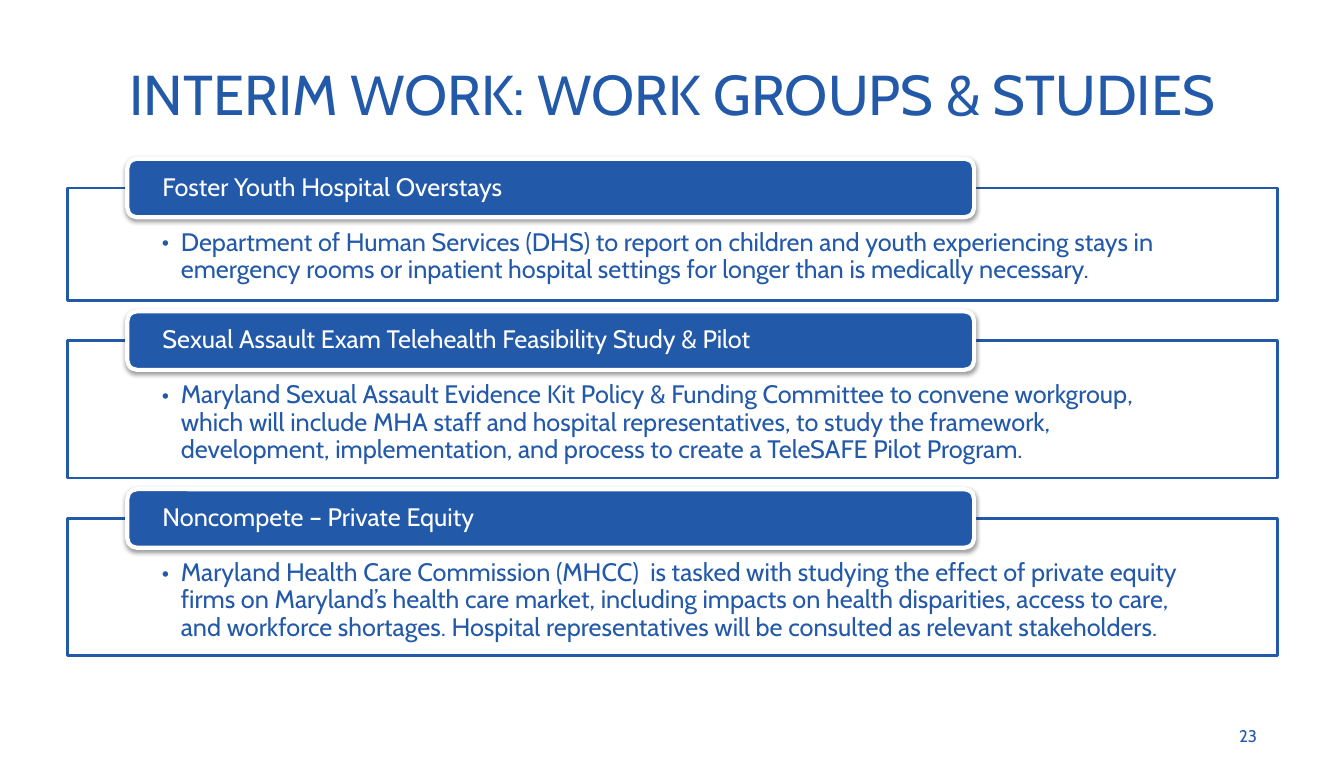
from dataclasses import dataclass

from lxml import etree
from pptx import Presentation
from pptx.dml.color import RGBColor
from pptx.enum.shapes import MSO_SHAPE as SHAPE
from pptx.enum.text import MSO_ANCHOR as ANCHOR, PP_ALIGN as ALIGN
from pptx.oxml import parse_xml
from pptx.oxml.ns import nsdecls, qn
from pptx.util import Inches, Pt


@dataclass(frozen=True)
class Theme:
    font: str = "Cabin"
    blue: RGBColor = RGBColor(0x23, 0x59, 0xA9)
    white: RGBColor = RGBColor(0xFF, 0xFF, 0xFF)
    title: Pt = Pt(40)
    body: Pt = Pt(18)
    number: Pt = Pt(12)


theme = Theme()


def write(sp, text, size, color, align, anchor, insets):
    """Fill a shape with one styled paragraph and return the paragraph."""
    tf = sp.text_frame
    tf.word_wrap = True
    tf.vertical_anchor = anchor
    tf.margin_left = tf.margin_right = Inches(insets[0])
    tf.margin_top, tf.margin_bottom = Inches(insets[1]), Inches(insets[2])
    p = tf.paragraphs[0]
    p.text = text
    p.alignment = align
    font = p.runs[0].font
    font.name, font.size, font.color.rgb = theme.font, size, color
    return p


def add_box(kind, left, top, width, height, fill, line, line_width):
    """Add a filled, outlined shape without a shadow."""
    sp = s.shapes.add_shape(kind, Inches(left), Inches(top), Inches(width), Inches(height))
    sp.shadow.inherit = False
    sp.fill.solid()
    sp.fill.fore_color.rgb = fill
    sp.line.color.rgb = line
    sp.line.width = Pt(line_width)
    return sp


prs = Presentation()
prs.slide_width, prs.slide_height = Inches(13.3), Inches(7.5)
s = prs.slides.add_slide(prs.slide_layouts[6])

# Title
title = s.shapes.add_textbox(Inches(0.67), Inches(0.3), Inches(11.97), Inches(1.25))
write(title, "INTERIM WORK: WORK GROUPS & STUDIES", theme.title, theme.blue,
      ALIGN.CENTER, ANCHOR.MIDDLE, (0.1, 0.05, 0.05))

# Work groups: heading, panel height, description
groups = [
    ("Foster Youth Hospital Overstays", 1.11,
     "Department of Human Services (DHS) to report on children and youth experiencing "
     "stays in emergency rooms or inpatient hospital settings for longer than is "
     "medically necessary."),
    ("Sexual Assault Exam Telehealth Feasibility Study & Pilot", 1.36,
     "Maryland Sexual Assault Evidence Kit Policy & Funding Committee to convene "
     "workgroup, which will include MHA staff and hospital representatives, to study "
     "the framework, development, implementation, and process to create a TeleSAFE "
     "Pilot Program."),
    ("Noncompete – Private Equity", 1.36,
     "Maryland Health Care Commission (MHCC)  is tasked with studying the effect of "
     "private equity firms on Maryland’s health care market, including impacts on health "
     "disparities, access to care, and workforce shortages. Hospital representatives "
     "will be consulted as relevant stakeholders."),
]
panel_top, panel_gap, heading_rise = 1.86, 0.4, 0.29

for heading, panel_height, description in groups:
    # Outlined panel with a bulleted description
    panel = add_box(SHAPE.RECTANGLE, 0.67, panel_top, 11.97, panel_height,
                    theme.white, theme.blue, 2)
    p = write(panel, description, theme.body, theme.blue,
              ALIGN.LEFT, ANCHOR.TOP, (0.93, 0.41, 0.14))
    p.line_spacing = 0.9
    pPr = p._p.get_or_add_pPr()
    pPr.set("marL", str(Inches(0.19)))
    pPr.set("indent", str(-Inches(0.19)))
    etree.SubElement(pPr, qn("a:buFont")).set("typeface", theme.font)
    etree.SubElement(pPr, qn("a:buChar")).set("char", "•")

    # Heading tab with a soft shadow, over the panel's top edge
    tab = add_box(SHAPE.ROUNDED_RECTANGLE, 1.26, panel_top - heading_rise, 8.38, 0.58,
                  theme.blue, theme.white, 3)
    p = write(tab, heading, theme.body, theme.white,
              ALIGN.LEFT, ANCHOR.MIDDLE, (0.32, 0, 0))
    p.line_spacing = 0.9
    tab._element.spPr.find(qn("a:effectLst")).append(parse_xml(
        f'<a:outerShdw {nsdecls("a")} blurRad="{Pt(3.1)}" dist="{Pt(1.6)}" '
        'dir="5400000" rotWithShape="0"><a:srgbClr val="000000">'
        '<a:alpha val="38000"/></a:srgbClr></a:outerShdw>'))

    panel_top += panel_height + panel_gap

# Slide number
number = s.shapes.add_textbox(Inches(11.88), Inches(7.08), Inches(0.66), Inches(0.4))
write(number, "23", theme.number, theme.blue, ALIGN.RIGHT, ANCHOR.MIDDLE, (0.1, 0.05, 0.05))

prs.save("out.pptx")
